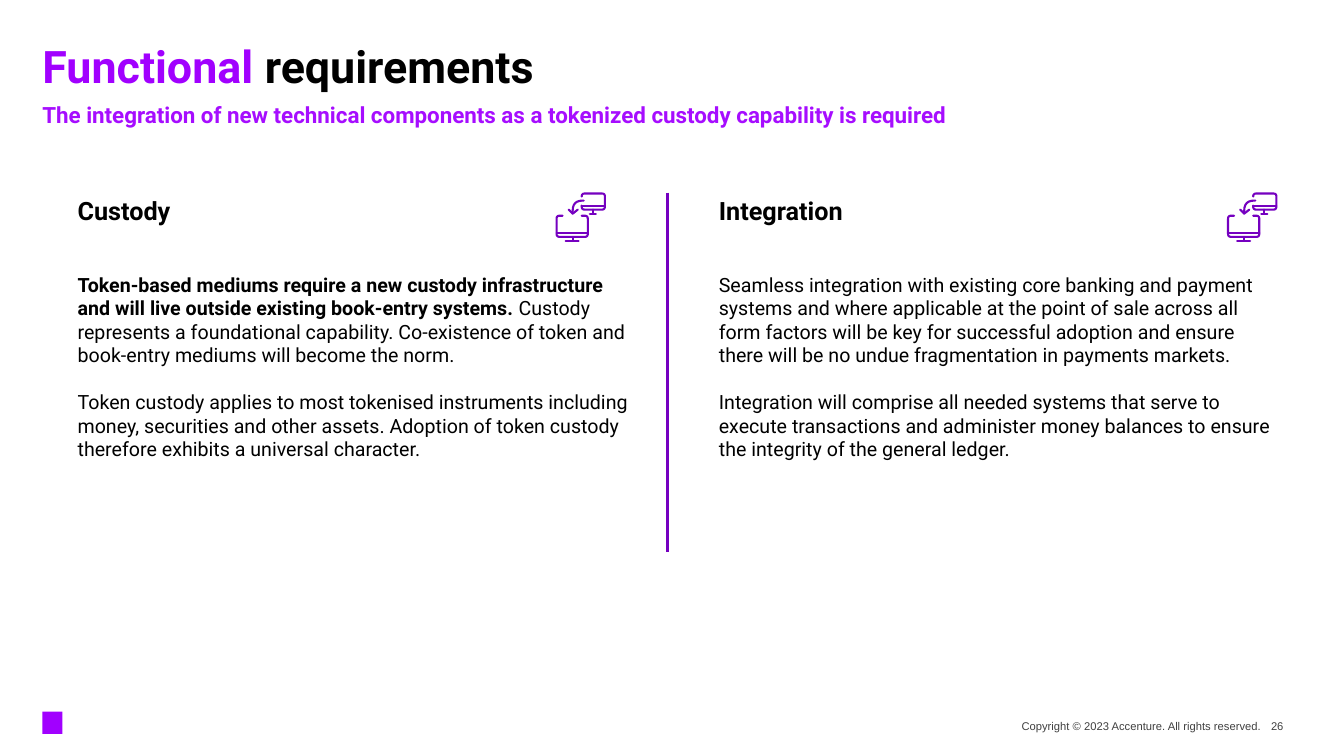
from lxml import etree
from pptx import Presentation
from pptx.dml.color import RGBColor
from pptx.enum import shapes, text
from pptx.oxml import ns
from pptx.util import Inches, Pt

BLACK = RGBColor(0x00, 0x00, 0x00)
GRAY = RGBColor(0x40, 0x40, 0x40)
VIOLET = RGBColor(0xA1, 0x00, 0xFF)
SOFT_VIOLET = RGBColor(0xA6, 0x0D, 0xFF)
PURPLE = RGBColor(0x75, 0x00, 0xC0)

TOP, LEFT, RIGHT = text.MSO_ANCHOR.TOP, text.PP_ALIGN.LEFT, text.PP_ALIGN.RIGHT

# Corner radius and points of each stroke, in hundredths of an inch.
ICON_STROKES = [
    (0, [(10, 48), (23, 48)]),
    (0, [(17, 44), (17, 48)]),
    (0, [(1, 40), (32, 40)]),
    (3, [(7, 23), (1, 23), (1, 44), (32, 44), (32, 23), (26, 23)]),
    (10, [(28, 8), (17, 8), (17, 21)]),
    (0, [(13, 17), (17, 21), (22, 17)]),
    (3, [(26, 4), (26, 1), (49, 1), (49, 17), (26, 17), (26, 13)]),
    (0, [(26, 13), (49, 13)]),
    (0, [(34, 21), (40, 21)]),
    (0, [(37, 17), (37, 21)]),
]

CUSTODY = [
    [("Token-based mediums require a new custody infrastructure and will live "
      "outside existing book-entry systems. ", True),
     ("Custody represents a foundational capability. Co-existence of token and "
      "book-entry mediums will become the norm.", False)],
    [("Token custody applies to most tokenised instruments including money, "
      "securities and other assets. Adoption of token custody therefore exhibits "
      "a universal character.", False)],
]
INTEGRATION = [
    [("Seamless integration with existing core banking and payment systems and "
      "where applicable at the point of sale across all form factors will be key "
      "for successful adoption and ensure there will be no undue fragmentation in "
      "payments markets.", False)],
    [("Integration will comprise all needed systems that serve to execute "
      "transactions and administer money balances to ensure the integrity of the "
      "general ledger.", False)],
]


def add_run(paragraph, words, size, color=BLACK, bold=False, font="Roboto"):
    run = paragraph.add_run()
    run.text = words
    run.font.name = font
    run.font.size = Pt(size)
    run.font.bold = bold
    run.font.color.rgb = color


def add_box(slide, left, top, width, height, inset_top=0, anchor=TOP):
    box = slide.shapes.add_textbox(
        Inches(left), Inches(top), Inches(width), Inches(height))
    frame = box.text_frame
    frame.word_wrap = True
    frame.vertical_anchor = anchor
    frame.margin_left = frame.margin_right = frame.margin_bottom = 0
    frame.margin_top = Inches(inset_top)
    return frame


def add_heading(slide, top, height, runs, size, spacing, inset_top=0):
    paragraph = add_box(slide, 0.42, top, 12.5, height, inset_top).paragraphs[0]
    paragraph.line_spacing = spacing
    for words, color in runs:
        add_run(paragraph, words, size, color, True)


def add_column(slide, left, heading, body):
    frame = add_box(slide, left, 1.94, 5.54, 3.57)
    add_run(frame.paragraphs[0], heading, 18, bold=True)
    for gap, runs in zip((33.5, 16.75), body):
        paragraph = frame.add_paragraph()
        paragraph.alignment = LEFT
        paragraph.space_before = Pt(gap)
        for words, bold in runs:
            add_run(paragraph, words, 14, bold=bold)


def add_footer(slide, left, width, words):
    frame = add_box(slide, left, 7.09, width, 0.23, anchor=text.MSO_ANCHOR.MIDDLE)
    frame.paragraphs[0].alignment = RIGHT
    add_run(frame.paragraphs[0], words, 8, GRAY, font="Arial")


def toward(corner, other, radius):
    length = abs(other[0] - corner[0]) + abs(other[1] - corner[1])
    return [c + (o - c) * radius / length for c, o in zip(corner, other)]


def round_corners(points, radius, steps=6):
    if not radius:
        return points
    outline = [points[0]]
    for before, corner, after in zip(points, points[1:], points[2:]):
        start, end = toward(corner, before, radius), toward(corner, after, radius)
        for step in range(steps + 1):
            t = step / steps
            outline.append(tuple(
                (1 - t) ** 2 * s + 2 * t * (1 - t) * c + t ** 2 * e
                for s, c, e in zip(start, corner, end)))
    return outline + [points[-1]]


def add_transfer_icon(slide, left, top):
    group = slide.shapes.add_group_shape()
    for radius, points in ICON_STROKES:
        outline = [(Inches(left + x / 100), Inches(top + y / 100))
                   for x, y in round_corners(points, radius)]
        builder = group.shapes.build_freeform(*outline[0])
        builder.add_line_segments(outline[1:], close=False)
        stroke = builder.convert_to_shape()
        stroke.shadow.inherit = False
        stroke.fill.background()
        stroke.line.color.rgb = PURPLE
        stroke.line.width = Pt(1.5)
        stroke.line._get_or_add_ln().set("cap", "rnd")


def add_divider(slide, x, top, bottom):
    divider = slide.shapes.add_connector(
        shapes.MSO_CONNECTOR.STRAIGHT,
        Inches(x), Inches(top), Inches(x), Inches(bottom))
    divider.line.color.rgb = PURPLE
    divider.line.width = Pt(2.25)
    etree.SubElement(divider._element.spPr, ns.qn("a:effectLst"))


def add_corner_mark(slide):
    mark = slide.shapes.add_shape(
        shapes.MSO_SHAPE.RECTANGLE,
        Inches(0.42), Inches(7.06), Inches(0.2), Inches(0.22))
    mark.shadow.inherit = False
    mark.fill.solid()
    mark.fill.fore_color.rgb = VIOLET
    mark.line.fill.background()


def main():
    presentation = Presentation()
    presentation.slide_width = Inches(13.33)
    presentation.slide_height = Inches(7.5)
    slide = presentation.slides.add_slide(presentation.slide_layouts[6])

    add_corner_mark(slide)
    add_heading(slide, 0.42, 0.71,
                [("Functional ", VIOLET), ("requirements", BLACK)], 32, 0.8, 0.07)
    add_heading(slide, 1.03, 0.55,
                [("The integration of new technical components as a tokenized "
                  "custody capability is required", SOFT_VIOLET)], 16, 0.9)
    add_column(slide, 0.77, "Custody", CUSTODY)
    add_column(slide, 7.13, "Integration", INTEGRATION)
    add_divider(slide, 6.62, 1.91, 5.48)
    for left in (5.51, 12.17):
        add_transfer_icon(slide, left, 1.91)
    add_footer(slide, 9.83, 2.68, "Copyright © 2023 Accenture. All rights reserved.")
    add_footer(slide, 12.5, 0.23, "26")

    presentation.save("out.pptx")


if __name__ == "__main__":
    main()
